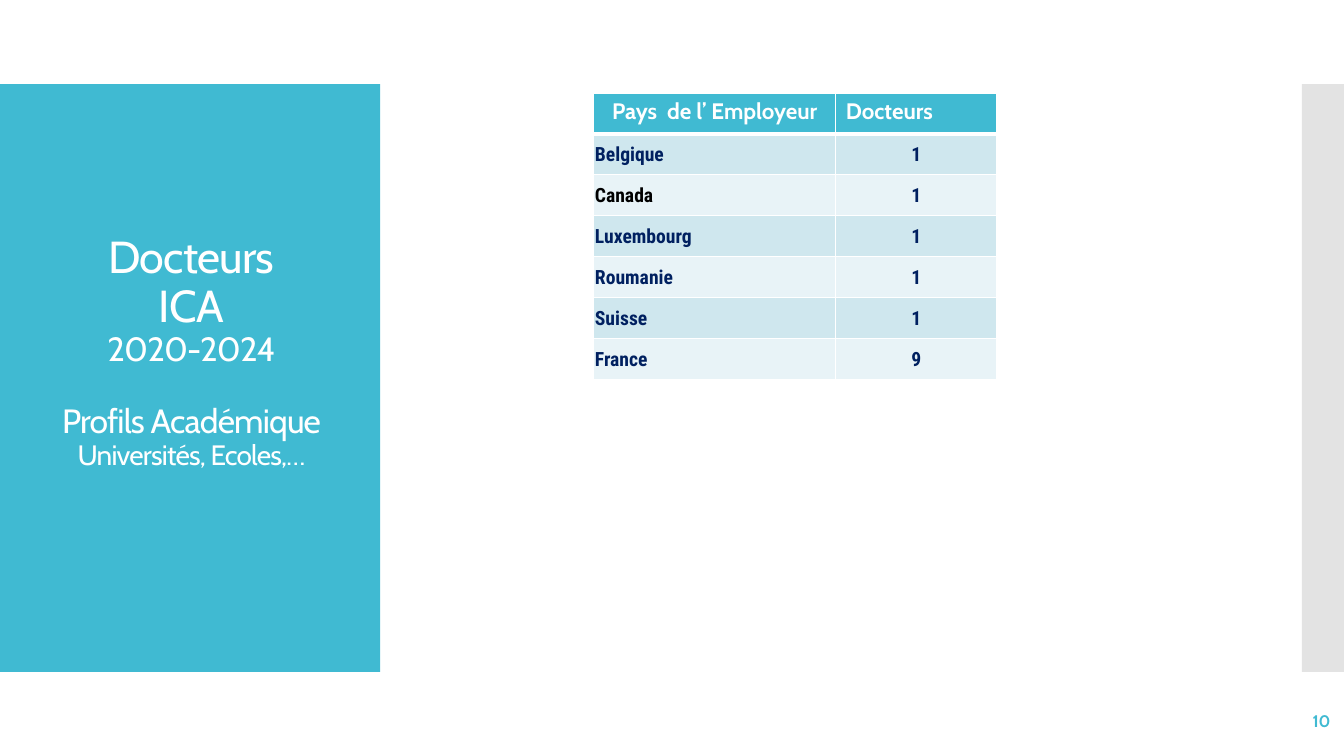
from lxml import etree
from pptx import Presentation
from pptx import util as u
from pptx.dml import color
from pptx.enum import shapes, text
from pptx.oxml import ns

# Content
TITLE = [  # wording, size name, space before
    ("Docteurs", "title", 0),
    ("ICA", "title", 0),
    ("2020-2024", "subtitle", 0),
    ("Profils Académique", "subtitle", 26),
    ("Universités, Ecoles,…", "detail", 0),
]
HEADERS = ["Pays  de l’ Employeur", "Docteurs"]
COUNTRIES = [
    ("Belgique", 1),
    ("Canada", 1),
    ("Luxembourg", 1),
    ("Roumanie", 1),
    ("Suisse", 1),
    ("France", 9),
]
PAGE_NUMBER = "10"

THEME = {
    "accent": "40BAD2", "side": "C8C8C8", "white": "FFFFFF", "black": "000000",
    "navy": "002060", "bands": ("CFE7EE", "E8F3F7"),
    "font": "Cabin", "cell_font": "Roboto Condensed",
    "title": 32, "subtitle": 24, "detail": 20, "header": 16, "cell": 14, "number": 12,
}
LEFT, CENTER, RIGHT = text.PP_ALIGN.LEFT, text.PP_ALIGN.CENTER, text.PP_ALIGN.RIGHT

# Layout, in points
WIDTH, HEIGHT = 960, 540
BAND_TOP, BAND_HEIGHT = 60, 420
PANEL_WIDTH, SIDE_WIDTH = 271.5, 30
COLUMNS = (172.8, 115.2)
ROW_HEIGHT = 29.2


def rgb(value):
    return color.RGBColor.from_string(value)


def write(para, wording, *, size, ink, font=THEME["font"], bold=False,
          align=LEFT, spacing=1.0, before=0, tracking=0):
    para.alignment = align
    para.line_spacing = spacing
    para.space_before = u.Pt(before)
    span = para.add_run()
    span.text = wording
    span.font.name, span.font.size, span.font.bold = font, u.Pt(size), bold
    span.font.color.rgb = rgb(ink)
    if tracking:
        span.font._element.set("spc", str(round(tracking * 100)))


def add_band(page, left, width, fill, opacity=100):
    band = page.shapes.add_shape(shapes.MSO_SHAPE.RECTANGLE, u.Pt(left), u.Pt(BAND_TOP),
                                 u.Pt(width), u.Pt(BAND_HEIGHT))
    band.shadow.inherit = False
    band.line.fill.background()
    band.fill.solid()
    band.fill.fore_color.rgb = rgb(fill)
    if opacity < 100:
        tint = band._element.spPr.find(".//" + ns.qn("a:srgbClr"))
        etree.SubElement(tint, ns.qn("a:alpha")).set("val", str(opacity * 1000))
    # Keep the bands behind the title placeholder
    page.shapes._spTree.insert(2, band._element)


def style_cell(cell, fill, bottom=1, top=1):
    cell.fill.solid()
    cell.fill.fore_color.rgb = rgb(fill)
    edges = {"lnL": 1, "lnR": 1, "lnT": top, "lnB": bottom}
    for place, (edge, weight) in enumerate(edges.items()):
        line = etree.Element(ns.qn("a:" + edge), w=str(u.Pt(weight)))
        solid = etree.SubElement(line, ns.qn("a:solidFill"))
        etree.SubElement(solid, ns.qn("a:srgbClr")).set("val", THEME["white"])
        cell._tc.get_or_add_tcPr().insert(place, line)


def add_title(page):
    title = page.shapes.title
    title.left, title.top = u.Pt(6.5), u.Pt(88.5)
    title.width, title.height = u.Pt(260.5), u.Pt(362)
    frame = title.text_frame
    frame.word_wrap = True
    frame.auto_size = text.MSO_AUTO_SIZE.NONE
    frame.vertical_anchor = text.MSO_ANCHOR.MIDDLE
    frame.margin_bottom = u.Pt(38)
    for index, (wording, size, before) in enumerate(TITLE):
        para = frame.add_paragraph() if index else frame.paragraphs[0]
        write(para, wording, size=THEME[size], ink=THEME["white"], align=CENTER,
              spacing=0.9, before=before, tracking=-0.6)


def add_country_table(page):
    rows = len(COUNTRIES) + 1
    table = page.shapes.add_table(rows, len(COLUMNS), u.Pt(424.2), u.Pt(66.5),
                                  u.Pt(sum(COLUMNS)), u.Pt(rows * ROW_HEIGHT)).table
    for column, width in zip(table.columns, COLUMNS):
        column.width = u.Pt(width)
    for row in table.rows:
        row.height = u.Pt(ROW_HEIGHT)

    # Header row
    for index, (wording, align) in enumerate(zip(HEADERS, (CENTER, LEFT))):
        cell = table.cell(0, index)
        style_cell(cell, THEME["accent"], bottom=3)
        write(cell.text_frame.paragraphs[0], wording, size=THEME["header"],
              ink=THEME["white"], bold=True, align=align)

    # Country rows
    for row, record in enumerate(COUNTRIES, start=1):
        for index, (value, align) in enumerate(zip(record, (LEFT, CENTER))):
            cell = table.cell(row, index)
            style_cell(cell, THEME["bands"][(row - 1) % 2], top=3 if row == 1 else 1)
            cell.vertical_anchor = text.MSO_ANCHOR.MIDDLE
            cell.margin_left = cell.margin_right = cell.margin_top = u.Pt(0.75)
            cell.margin_bottom = 0
            ink = THEME["black"] if value == "Canada" else THEME["navy"]
            write(cell.text_frame.paragraphs[0], str(value), size=THEME["cell"], ink=ink,
                  font=THEME["cell_font"], bold=True, align=align)


def add_page_number(page):
    box = page.shapes.add_textbox(u.Pt(837.5), u.Pt(500.5), u.Pt(120), u.Pt(28.75))
    frame = box.text_frame
    frame.word_wrap = True
    frame.vertical_anchor = text.MSO_ANCHOR.MIDDLE
    write(frame.paragraphs[0], PAGE_NUMBER, size=THEME["number"], ink=THEME["accent"],
          bold=True, align=RIGHT)


def main():
    deck = Presentation()
    deck.slide_width, deck.slide_height = u.Pt(WIDTH), u.Pt(HEIGHT)
    page = deck.slides.add_slide(deck.slide_layouts[5])
    add_band(page, 0, PANEL_WIDTH, THEME["accent"])
    add_band(page, WIDTH - SIDE_WIDTH, SIDE_WIDTH, THEME["side"], opacity=50)
    add_title(page)
    add_country_table(page)
    add_page_number(page)
    deck.save("out.pptx")


if __name__ == "__main__":
    main()
